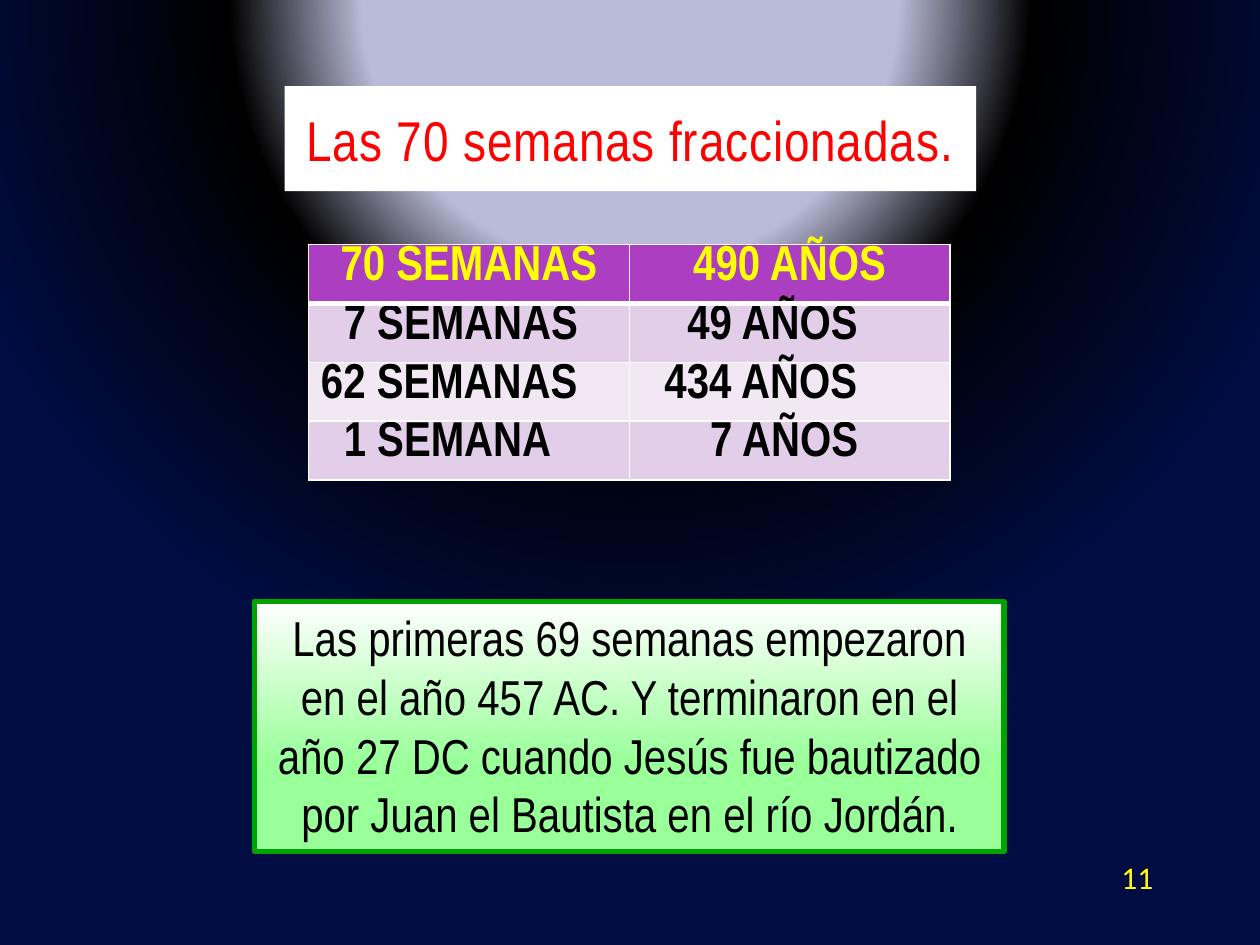
from lxml.etree import fromstring
from pptx import Presentation
from pptx.dml.color import RGBColor as RGB
from pptx.enum.text import MSO_ANCHOR as Anchor, MSO_AUTO_SIZE as Auto, PP_ALIGN as Align
from pptx.util import Cm, Pt

# Content
TITLE = "Las 70 semanas fraccionadas."
HEAD = ("70 SEMANAS", "490 AÑOS")
# Each entry: text and its indent, in digit-aligning steps
ROWS = [
    (("7 SEMANAS", 2), ("49 AÑOS", 4)),
    (("62 SEMANAS", 0), ("434 AÑOS", 2)),
    (("1 SEMANA", 2), ("7 AÑOS", 6)),
]
NOTE = ("Las primeras 69 semanas empezaron en el año 457 AC. Y terminaron en el "
        "año 27 DC cuando Jesús fue bautizado por Juan el Bautista en el río Jordán.")
PAGE = "11"

# Theme
FACE = "Arial Narrow"
THEME = {
    "back": [(34, "B9BBD8"), (51, "000000"), (91, "000C42")],
    "note": [(0, "FFFFFF"), (65, "99FF99")],
    "edge": "00A200",
    "head": "AC3EC1",
    "bands": ("E3CEE9", "F1E8F4"),
    "white": "FFFFFF",
    "title": {"name": FACE, "size": Pt(32), "bold": False, "color": "FF0000"},
    "label": {"name": FACE, "size": Pt(28), "bold": True, "color": "FFFF00"},
    "cell": {"name": FACE, "size": Pt(28), "bold": True, "color": "000000"},
    "body": {"name": FACE, "size": Pt(28), "bold": False, "color": "000000"},
    "page": {"name": "Calibri", "size": Pt(18), "bold": False, "color": "FFFF00"},
}
NS = "http://schemas.openxmlformats.org/drawingml/2006/main"

# Places: left, top, width, height in cm
TITLE_BOX = (5.74, 1.98, 13.94, 1.63)
TABLE_BOX = (6.22, 4.93, 12.93, 4.74)
NOTE_BOX = (5.13, 12.12, 15.11, 5.05)
PAGE_BOX = (22, 17.17, 1.5, 1.02)
PAD, STEP = 0.25, 0.23


def place(box):
    return [Cm(n) for n in box]


def write(frame, text, style, align):
    para = frame.paragraphs[0]
    para.alignment = align
    run = para.add_run()
    run.text = text
    for key, val in style.items():
        if key == "color":
            run.font.color.rgb = RGB.from_string(val)
        else:
            setattr(run.font, key, val)
    return run


def setup(frame, **opts):
    for key, val in {"word_wrap": True, **opts}.items():
        setattr(frame, key, val)


def border(cell, top, low):
    props = cell._tc.get_or_add_tcPr()
    for side, wide in zip("LRTB", (1, 1, top, low)):
        props.append(fromstring(
            f'<a:ln{side} xmlns:a="{NS}" w="{Pt(wide)}"><a:solidFill>'
            f'<a:srgbClr val="{THEME["white"]}"/></a:solidFill></a:ln{side}>'))


def paint(fill, color):
    fill.solid()
    fill.fore_color.rgb = RGB.from_string(color)


prs = Presentation()
prs.slide_width, prs.slide_height = Cm(25.4), Cm(19.05)
slide = prs.slides.add_slide(prs.slide_layouts[5])
shapes = slide.shapes

# Background: a glow centred above the slide
slide.background.fill.solid()
solid = slide.background._cSld.find(f".//{{{NS}}}solidFill")
stops = "".join(f'<a:gs pos="{pos * 1000}"><a:srgbClr val="{color}"/></a:gs>'
                for pos, color in THEME["back"])
solid.getparent().replace(solid, fromstring(
    f'<a:gradFill xmlns:a="{NS}" rotWithShape="1"><a:gsLst>{stops}</a:gsLst>'
    '<a:path path="circle"><a:fillToRect l="50000" t="-80000" r="50000" b="180000"/>'
    '</a:path></a:gradFill>'))

# Title
title = shapes.title
title.left, title.top, title.width, title.height = place(TITLE_BOX)
paint(title.fill, THEME["white"])
setup(title.text_frame, auto_size=Auto.SHAPE_TO_FIT_TEXT, vertical_anchor=Anchor.MIDDLE)
run = write(title.text_frame, TITLE, THEME["title"], Align.CENTER)
run.font._element.set("spc", "50")

# Table
table = shapes.add_table(len(ROWS) + 1, len(HEAD), *place(TABLE_BOX)).table
grid = [[(text, 0) for text in HEAD]] + ROWS
for r, line in enumerate(grid):
    table.rows[r].height = Cm(TABLE_BOX[3] / len(grid))
    for c, (text, steps) in enumerate(line):
        cell = table.cell(r, c)
        cell.margin_top = cell.margin_bottom = 0
        cell.margin_left = Cm(PAD + STEP * steps)
        border(cell, 3 if r == 1 else 1, 3 if r == 0 else 1)
        paint(cell.fill, THEME["bands"][(r - 1) % 2] if r else THEME["head"])
        write(cell.text_frame, text, THEME["cell" if r else "label"],
              Align.LEFT if r else Align.CENTER)

# Note
note = shapes.add_shape(1, *place(NOTE_BOX))
note.shadow.inherit = False
note.fill.gradient()
note.fill.gradient_angle = 270
for stop, (pos, color) in zip(note.fill.gradient_stops, THEME["note"]):
    stop.position = pos / 100
    stop.color.rgb = RGB.from_string(color)
note.line.color.rgb = RGB.from_string(THEME["edge"])
note.line.width = Pt(3)
setup(note.text_frame, auto_size=Auto.SHAPE_TO_FIT_TEXT, vertical_anchor=Anchor.TOP)
write(note.text_frame, NOTE, THEME["body"], Align.CENTER)

# Page number
page = shapes.add_textbox(*place(PAGE_BOX))
setup(page.text_frame, vertical_anchor=Anchor.MIDDLE)
write(page.text_frame, PAGE, THEME["page"], Align.RIGHT)

prs.save("out.pptx")
